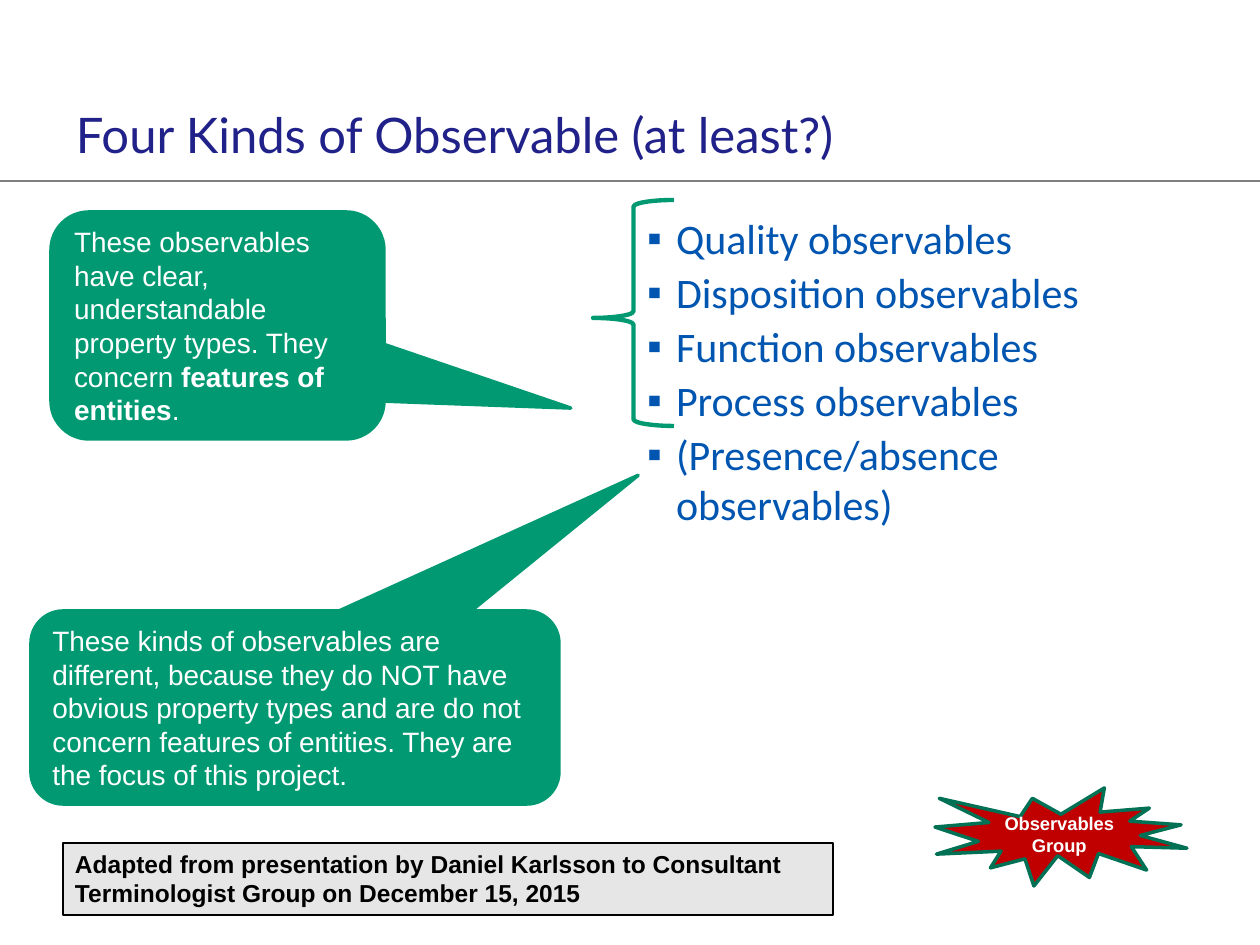
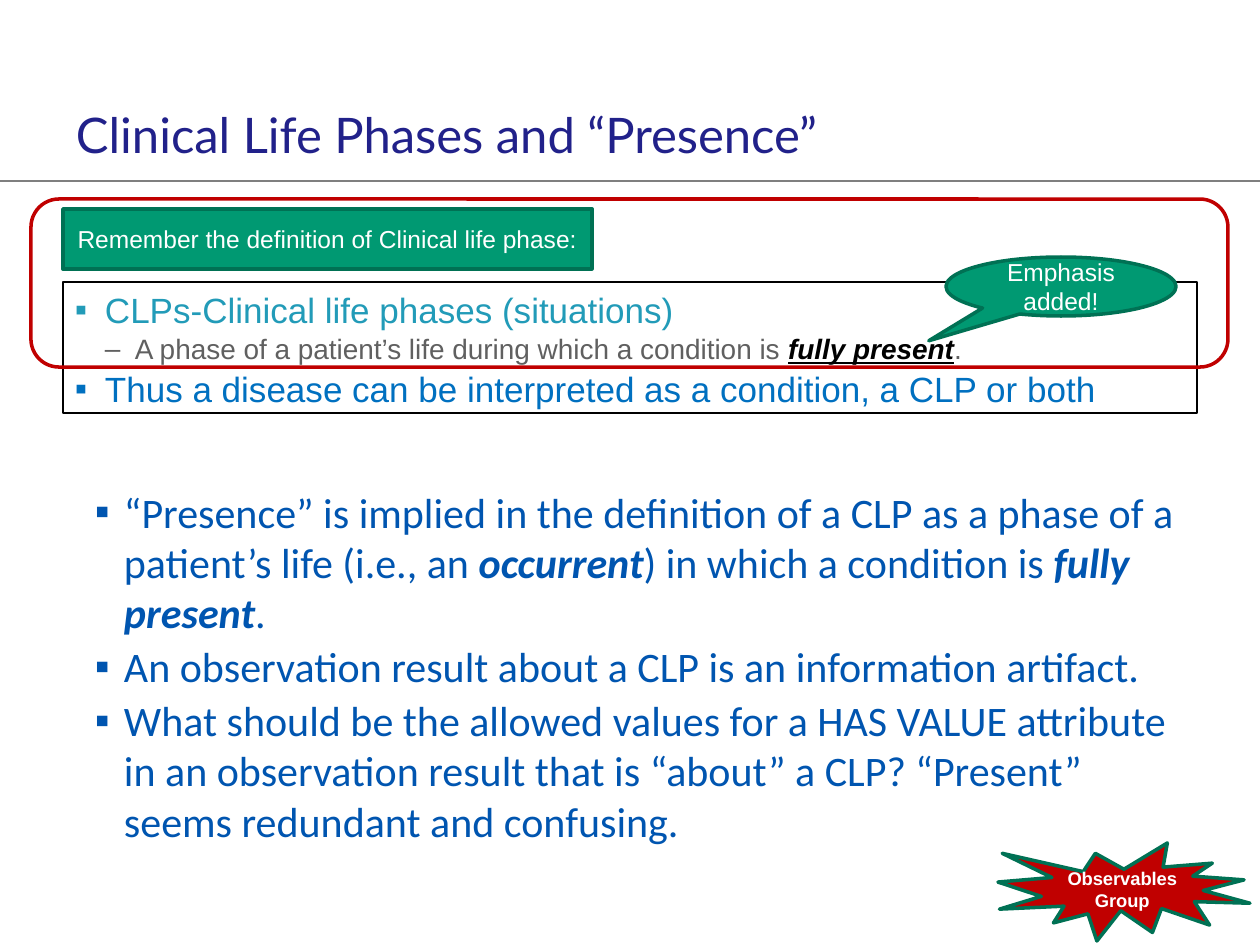
import pptx
import pptx.util
import pptx.dml.color
import pptx.enum.shapes
import pptx.enum.text
import pptx.oxml

SHAPE = pptx.enum.shapes.MSO_SHAPE
ALIGN = pptx.enum.text.PP_ALIGN
ANCHOR = pptx.enum.text.MSO_ANCHOR
NS = 'xmlns:a="http://schemas.openxmlformats.org/drawingml/2006/main"'
SCALE = 914400 / 126  # EMU in one px

GREEN, EDGE, RED = "009972", "007154", "C00000"
WHITE, BLACK, BLUE = "FFFFFF", "000000", "0055B0"
TITLE = {"name": "Lato", "size": 28, "color": "21218A"}
BODY = {"name": "Calibri", "size": 24, "color": BLUE}
NOTE = {"name": "Arial", "size": 16, "color": WHITE}
LABEL = {**NOTE, "size": 14}
BADGE = {**NOTE, "size": 10.5, "bold": True}
SOURCE = {**LABEL, "color": BLACK, "bold": True}
STRONG = {"bold": True}
STRESS = {"bold": True, "italic": True}


def write(shape, paras, font, inset=(12, 6), anchor=ANCHOR.TOP, align=ALIGN.LEFT):
    """Each paragraph is (runs, bullet, margin, hang, space, format); a run is (words, format)."""
    frame = shape.text_frame
    side, top = (round(n * SCALE) for n in inset)
    look = {"word_wrap": True, "auto_size": pptx.enum.text.MSO_AUTO_SIZE.NONE,
            "vertical_anchor": anchor, "margin_left": side, "margin_right": side,
            "margin_top": top, "margin_bottom": top}
    for key, value in look.items():
        setattr(frame, key, value)
    for i, (runs, mark, left, hang, space, style) in enumerate(paras):
        para = frame.paragraphs[0] if i == 0 else frame.add_paragraph()
        para.alignment = align
        para.space_before = pptx.util.Pt(space if i else 0)
        para.space_after = pptx.util.Pt(space)
        if mark:
            props = para._p.get_or_add_pPr()
            props.set("marL", str(round(left * SCALE)))
            props.set("indent", str(round(-hang * SCALE)))
            tint = {**font, **style}["color"]
            for tag in (f'<a:buClr {NS}><a:srgbClr val="{tint}"/></a:buClr>',
                        f'<a:buFont {NS} typeface="Arial"/>',
                        f'<a:buChar {NS} char="{mark}"/>'):
                props.append(pptx.oxml.parse_xml(tag))
        for words, extra in runs:
            run = para.add_run()
            run.text = words
            for key, value in {**font, **style, **extra}.items():
                if key == "color":
                    run.font.color.rgb = pptx.dml.color.RGBColor.from_string(value)
                else:
                    setattr(run.font, key, pptx.util.Pt(value) if key == "size" else value)


def draw(slide, kind, box, fill=None, line=None, width=2, adjust=()):
    """Add a preset shape, or a text box when kind is None."""
    place = [round(n * SCALE) for n in box]
    if kind is None:
        return slide.shapes.add_textbox(*place)
    shape = slide.shapes.add_shape(kind, *place)
    shape.shadow.inherit = False
    if fill:
        shape.fill.solid()
        shape.fill.fore_color.rgb = pptx.dml.color.RGBColor.from_string(fill)
    else:
        shape.fill.background()
    shape.line.color.rgb = pptx.dml.color.RGBColor.from_string(line)
    shape.line.width = pptx.util.Pt(width)
    for i, value in enumerate(adjust):
        shape.adjustments[i] = value
    return shape


deck = pptx.Presentation()
deck.slide_width = round(1260 * SCALE)
deck.slide_height = round(945 * SCALE)

# Title, rule and body bullets of both slides
pages = [
    ("Four Kinds of Observable (at least?)", (615, 200, 611, 292), [
        [("Quality observables", {})],
        [("Disposition observables", {})],
        [("Function observables", {})],
        [("Process observables", {})],
        [("(Presence/absence observables)", {})]]),
    ("Clinical Life Phases and “Presence”", (63, 473, 1134, 397), [
        [("“Presence” is implied in the definition of a CLP as a phase of a "
          "patient’s life (i.e., an ", {}), ("occurrent", STRESS),
         (") in which a condition is ", {}), ("fully present", STRESS), (".", {})],
        [("An observation result about a CLP is an information artifact.", {})],
        [("What should be the allowed values for a HAS VALUE attribute in an "
          "observation result that is “about” a CLP? “Present” seems redundant "
          "and confusing.", {})]]),
]
for head, box, points in pages:
    slide = deck.slides.add_slide(deck.slide_layouts[5])
    title = slide.shapes.title
    for key, value in zip(("left", "top", "width", "height"), (63, 98, 908, 71)):
        setattr(title, key, round(value * SCALE))
    write(title, [([(head, {})], None, 0, 0, 0, {})], TITLE, (13, 13), ANCHOR.MIDDLE)
    rule = slide.shapes.add_connector(pptx.enum.shapes.MSO_CONNECTOR.STRAIGHT,
                                      0, round(181 * SCALE),
                                      deck.slide_width, round(181 * SCALE))
    rule.line.color.rgb = pptx.dml.color.RGBColor.from_string("7F7F7F")
    rule.line.width = pptx.util.Pt(0.75)
    rule._element.spPr.append(pptx.oxml.parse_xml(f"<a:effectLst {NS}/>"))
    write(draw(slide, None, box), [(runs, "▪", 48, 29, 1, {}) for runs in points],
          BODY, (13, 13))
kinds, phases = deck.slides

# Four kinds: source, brace and two callouts
source = draw(kinds, SHAPE.RECTANGLE, (63, 843, 770, 72), "E6E6E6", BLACK, 0.75)
write(source, [([(words, {})], None, 0, 0, 0, {}) for words in (
    "Adapted from presentation by Daniel Karlsson to Consultant",
    "Terminologist Group on December 15, 2015")], SOURCE)
brace = draw(kinds, SHAPE.RIGHT_BRACE, (593, 200, 81, 226), None, GREEN, 2.5, (0.083, 0.522))
brace._element.spPr.xfrm.set("flipH", "1")
calls = [
    ((31, 611, 528, 193), (0.65, -1.203, 0.167), [
        ("These kinds of observables are different, because they do NOT have "
         "obvious property types and are do not concern features of entities. "
         "They are the focus of this project.", {})]),
    ((51, 212, 333, 227), (1.061, 0.364, 0.167), [
        ("These observables have clear, understandable property types. They concern ", {}),
        ("features of entities", STRONG), (".", {})]),
]
for box, adjust, runs in calls:
    call = draw(kinds, SHAPE.ROUNDED_RECTANGULAR_CALLOUT, box, GREEN, GREEN, 2, adjust)
    write(call, [(runs, None, 0, 0, 0, {})], NOTE, anchor=ANCHOR.MIDDLE)

# Life phases: definition with its labels
frame = draw(phases, SHAPE.RECTANGLE, (63, 282, 1134, 131), None, BLACK, 0.75)
write(frame, [
    ([("CLPs-Clinical life phases (situations)", {})], "▪", 30, 30, 0.5, {"color": "229BB8"}),
    ([("A phase of a patient’s life during which a condition is ", {}),
      ("fully present", {**STRESS, "underline": True, "color": BLACK}), (".", {})],
     "–", 60, 30, 0.5, {"size": 16, "color": "606060"}),
    ([("Thus a disease can be interpreted as a condition, a CLP or both", {})],
     "▪", 30, 30, 0.5, {"color": "0070C0"}),
], {"name": "Arial", "size": 20})

labels = [
    (phases, SHAPE.OVAL_CALLOUT, (946, 257, 230, 59), GREEN, (-0.575, 0.92),
     "Emphasis added!", LABEL),
    (phases, SHAPE.RECTANGLE, (63, 209, 529, 60), GREEN, (),
     "Remember the definition of Clinical life phase:", LABEL),
    (kinds, SHAPE.EXPLOSION1, (935, 788, 252, 98), RED, (), "Observables Group", BADGE),
    (phases, SHAPE.EXPLOSION1, (998, 843, 252, 98), RED, (), "Observables Group", BADGE),
]
for slide, kind, box, fill, adjust, words, font in labels:
    label = draw(slide, kind, box, fill, EDGE, 2, adjust)
    write(label, [([(words, {})], None, 0, 0, 0, {})], font,
          anchor=ANCHOR.MIDDLE, align=ALIGN.CENTER)
draw(phases, SHAPE.ROUNDED_RECTANGLE, (31, 199, 1197, 168), None, RED)

deck.save("out.pptx")
